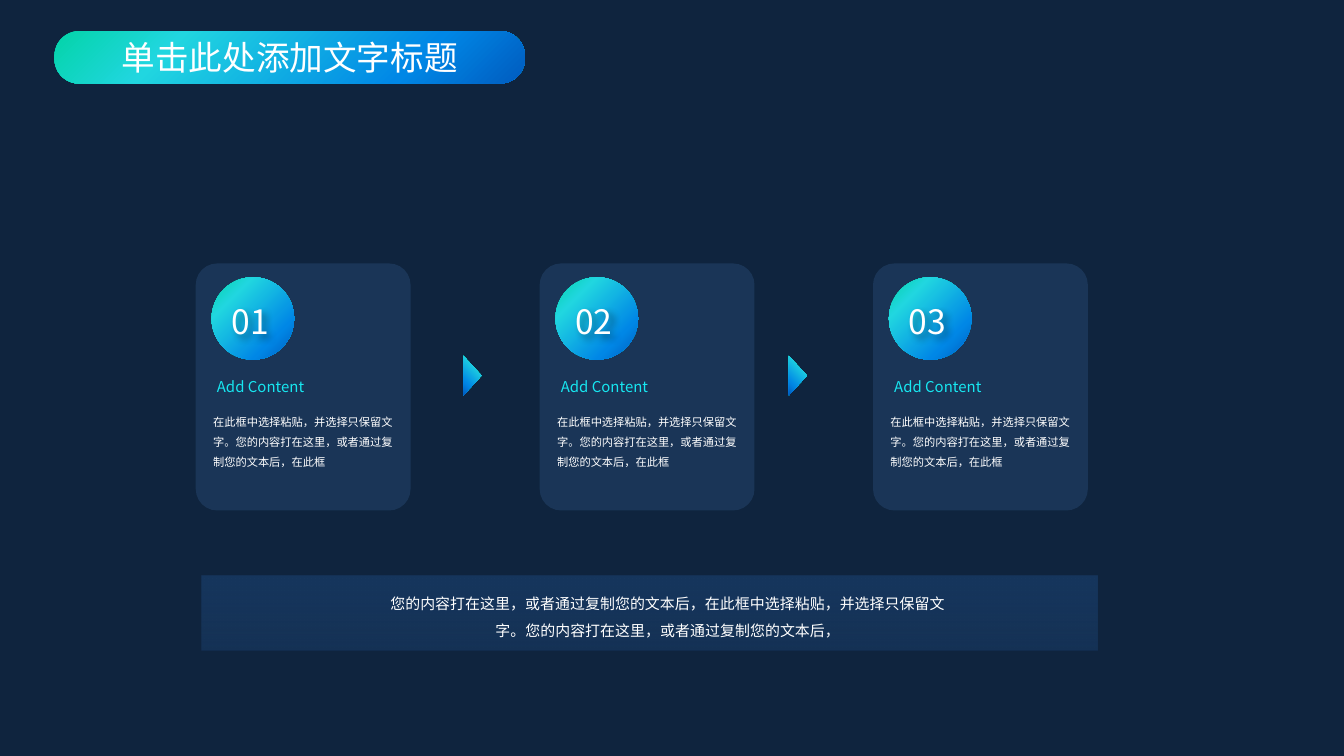
from dataclasses import dataclass

from lxml.etree import SubElement
from pptx import Presentation
from pptx.dml.color import RGBColor
from pptx.enum.shapes import MSO_SHAPE as Preset
from pptx.enum.text import MSO_ANCHOR as Anchor, MSO_AUTO_SIZE as AutoSize, PP_ALIGN as Align
from pptx.oxml.ns import qn
from pptx.util import Cm, Pt


@dataclass(frozen=True)
class Theme:
    font: str = "Noto Sans CJK SC"
    background: str = "0F243E"
    card: str = "558ED5"
    white: str = "FFFFFF"
    accent: str = "17E7F1"
    shadow: str = "000000"
    # Gradient stops: position, colour, opacity (all but colour in percent)
    bright: tuple = ((0, "03D4A8", 100), (25, "21D6E0", 100),
                     (75, "0087E6", 100), (100, "005CBF", 100))
    banner: tuple = ((3, "17375E", 100), (100, "183860", 68))
    title_size: int = 18
    heading_size: int = 8
    body_size: int = 6


THEME = Theme()
CARD_LEFTS = (3.7, 10.2, 16.5)
ARROW_LEFTS = (8.56, 14.71)
CARD_TEXT = "在此框中选择粘贴，并选择只保留文字。您的内容打在这里，或者通过复制您的文本后，在此框"
BANNER_TEXT = ("您的内容打在这里，或者通过复制您的文本后，在此框中选择粘贴，"
               "并选择只保留文字。您的内容打在这里，或者通过复制您的文本后，")


def add_color(parent, color, opacity):
    element = SubElement(parent, qn("a:srgbClr"), val=color)
    if opacity < 100:
        SubElement(element, qn("a:alpha"), val=str(opacity * 1000))


def fill_gradient(shape, stops, angle):
    shape.fill.gradient()
    shape.fill.gradient_angle = 360 - angle  # the library counts anticlockwise
    stop_list = shape.fill._fill._gradFill.find(qn("a:gsLst"))
    for old_stop in list(stop_list):
        stop_list.remove(old_stop)
    for position, color, opacity in stops:
        stop = SubElement(stop_list, qn("a:gs"), pos=str(position * 1000))
        add_color(stop, color, opacity)


def fill_solid(shape, color, opacity):
    shape.fill.solid()
    shape.fill.fore_color.rgb = RGBColor.from_string(color)
    element = shape.fill._xPr.find(qn("a:solidFill"))[0]
    SubElement(element, qn("a:alpha"), val=str(opacity * 1000))


def add_panel(slide, preset, box):
    shape = slide.shapes.add_shape(preset, *map(Cm, box))
    shape.shadow.inherit = False
    shape.line.fill.background()
    return shape


def write_text(shape, text, size, color=THEME.white, frame_format=None, **paragraph_format):
    frame = shape.text_frame
    paragraph = frame.paragraphs[0]
    run = paragraph.add_run()
    run.text = text
    font_format = {"name": THEME.font, "size": Pt(size)}
    for target, values in ((frame, frame_format or {}),
                           (paragraph, paragraph_format),
                           (run.font, font_format)):
        for name, value in values.items():
            setattr(target, name, value)
    run.font.color.rgb = RGBColor.from_string(color)
    SubElement(run._r.get_or_add_rPr(), qn("a:ea"), typeface=THEME.font)


def add_text(slide, box, text, size, color=THEME.white, wrap=True, **paragraph_format):
    shape = slide.shapes.add_textbox(*map(Cm, box))
    frame_format = {"word_wrap": wrap, "auto_size": AutoSize.SHAPE_TO_FIT_TEXT}
    write_text(shape, text, size, color, frame_format, **paragraph_format)
    return shape


def add_soft_shadow(shape):
    effects = SubElement(shape._element.spPr, qn("a:effectLst"))
    shadow = SubElement(effects, qn("a:outerShdw"), blurRad=str(Pt(4)),
                        dist=str(Pt(3)), dir="2700000", algn="tl")
    add_color(shadow, THEME.shadow, 40)


def add_title(slide, text):
    title = add_panel(slide, Preset.ROUNDED_RECTANGLE, (1.03, 0.59, 8.89, 0.99))
    title.adjustments[0] = 0.47
    fill_gradient(title, THEME.bright, 45)
    write_text(title, text, THEME.title_size, alignment=Align.CENTER,
               frame_format={"vertical_anchor": Anchor.MIDDLE, "word_wrap": True})


def add_card(slide, left, number):
    card = add_panel(slide, Preset.ROUNDED_RECTANGLE, (left, 4.98, 4.06, 4.67))
    card.adjustments[0] = 0.1
    fill_solid(card, THEME.card, 17)
    add_text(slide, (left + 0.15, 7.01, 2.79, 0.61), "Add Content",
             THEME.heading_size, THEME.accent)
    add_text(slide, (left + 0.08, 7.6, 3.99, 1.8), CARD_TEXT,
             THEME.body_size, line_spacing=1.5)

    # Numbered badge
    badge = add_panel(slide, Preset.OVAL, (left + 0.3, 5.24, 1.56, 1.56))
    fill_gradient(badge, THEME.bright, 45)
    label = add_text(slide, (left + 0.33, 5.56, 1.3, 1.02), f"{number:02}",
                     THEME.title_size, wrap=False, alignment=Align.RIGHT)
    add_soft_shadow(label)


def add_arrow(slide, left):
    arrow = add_panel(slide, Preset.ISOSCELES_TRIANGLE, (left, 6.93, 0.74, 0.34))
    arrow.rotation = 90
    fill_gradient(arrow, THEME.bright, 45)


def add_banner(slide, text):
    banner = add_panel(slide, Preset.RECTANGLE, (3.81, 10.89, 16.94, 1.4))
    fill_gradient(banner, THEME.banner, 90)
    add_text(slide, (7.01, 10.95, 11.23, 1.22), text, THEME.heading_size,
             alignment=Align.CENTER, line_spacing=1.5)


def main():
    presentation = Presentation()
    presentation.slide_width, presentation.slide_height = Cm(25.4), Cm(14.29)
    slide = presentation.slides.add_slide(presentation.slide_layouts[6])
    background = slide.background.fill
    background.solid()
    background.fore_color.rgb = RGBColor.from_string(THEME.background)

    # Title
    add_title(slide, "单击此处添加文字标题")

    # Three steps and the arrows between them
    for number, left in enumerate(CARD_LEFTS, start=1):
        add_card(slide, left, number)
    for left in ARROW_LEFTS:
        add_arrow(slide, left)

    # Closing banner
    add_banner(slide, BANNER_TEXT)
    presentation.save("out.pptx")


if __name__ == "__main__":
    main()
